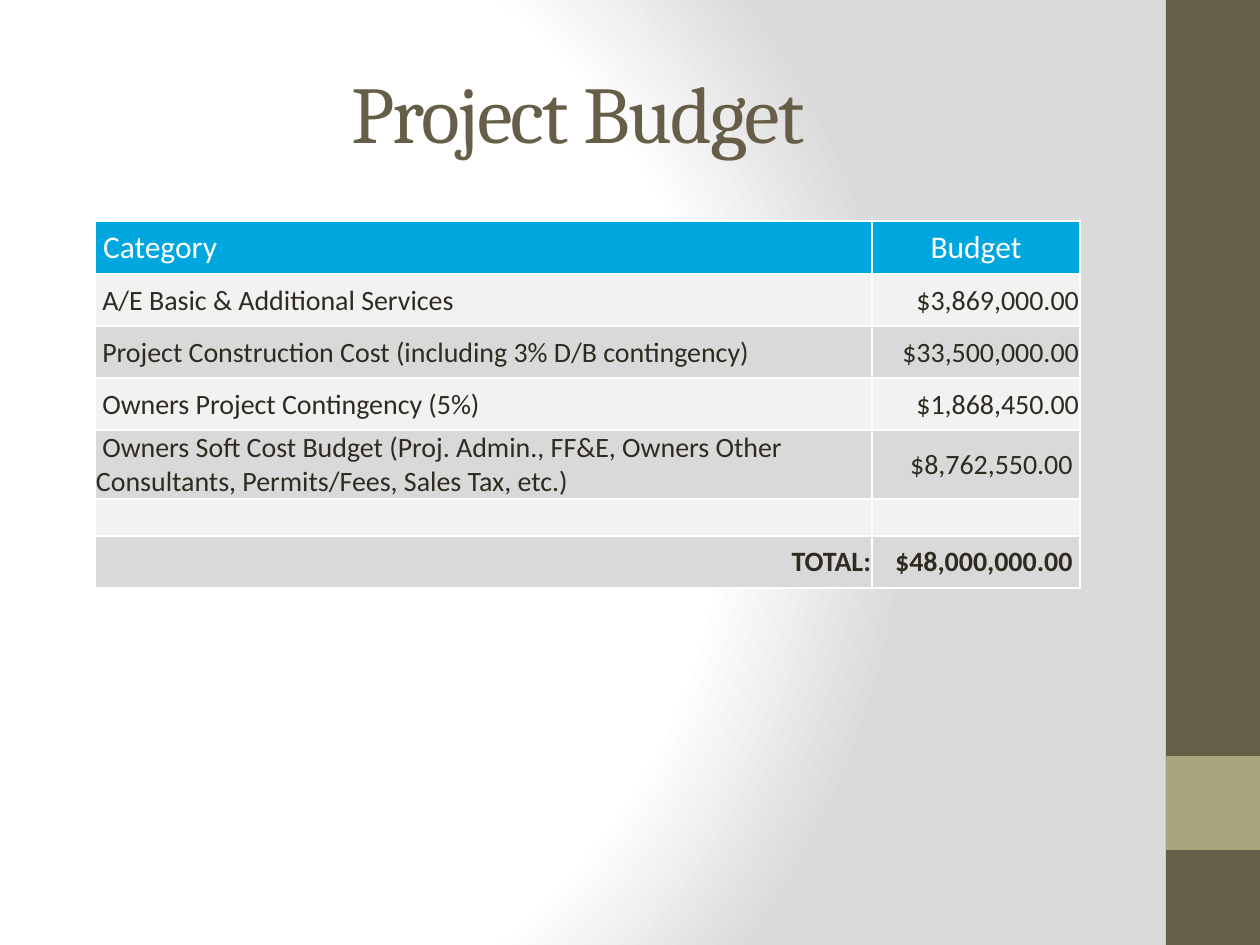
import lxml.etree
import pptx
import pptx.dml.color
import pptx.enum.shapes
import pptx.enum.text
import pptx.oxml
import pptx.oxml.ns
import pptx.util

RGBColor = pptx.dml.color.RGBColor
BROWN = RGBColor(0x67, 0x5E, 0x47)
OLIVE = RGBColor(0xA9, 0xA5, 0x7C)
BLUE = RGBColor(0x00, 0xA6, 0xDE)
WHITE = RGBColor(0xFF, 0xFF, 0xFF)
LIGHT_GRAY = RGBColor(0xF2, 0xF2, 0xF2)
MID_GRAY = RGBColor(0xD9, 0xD9, 0xD9)
PALE_GRAY = RGBColor(0xDA, 0xDA, 0xDA)
INK = RGBColor(0x2F, 0x2B, 0x20)

LEFT = pptx.enum.text.PP_ALIGN.LEFT
CENTER = pptx.enum.text.PP_ALIGN.CENTER
RIGHT = pptx.enum.text.PP_ALIGN.RIGHT
MIDDLE = pptx.enum.text.MSO_ANCHOR.MIDDLE
qn = pptx.oxml.ns.qn


def px(length):
    return pptx.util.Emu(round(length * 914400 / 126))


def add_text(paragraph, text, alignment, font_format):
    paragraph.alignment = alignment
    run = paragraph.add_run()
    run.text = text
    for name, value in font_format.items():
        if name == "color":
            run.font.color.rgb = value
        else:
            setattr(run.font, name, value)
    return run


presentation = pptx.Presentation()
presentation.slide_width = px(1260)
presentation.slide_height = px(945)
slide = presentation.slides.add_slide(presentation.slide_layouts[6])

# Background: circular gradient
slide.background.fill.gradient()
gradient = slide.element.find(".//" + qn("a:gradFill"))
for child in list(gradient):
    gradient.remove(child)
stops = lxml.etree.SubElement(gradient, qn("a:gsLst"))
for position, color in ((0, WHITE), (75, WHITE), (100, PALE_GRAY)):
    stop = lxml.etree.SubElement(stops, qn("a:gs"), pos=str(position * 1000))
    lxml.etree.SubElement(stop, qn("a:srgbClr"), val=str(color))
circle = lxml.etree.SubElement(gradient, qn("a:path"), {"path": "circle"})
lxml.etree.SubElement(circle, qn("a:fillToRect"), l="20000", t="50000", r="100000", b="50000")

# Side bar and its accent square
for top, height, color in ((0, 945, BROWN), (756, 94, OLIVE)):
    bar = slide.shapes.add_shape(
        pptx.enum.shapes.MSO_SHAPE.RECTANGLE, px(1166), px(top), px(94), px(height))
    bar.shadow.inherit = False
    bar.fill.solid()
    bar.fill.fore_color.rgb = color
    bar.line.fill.background()

# Title
title = slide.shapes.add_textbox(px(53), px(32), px(1050), px(158))
title.text_frame.word_wrap = True
title.text_frame.vertical_anchor = MIDDLE
title_run = add_text(
    title.text_frame.paragraphs[0], "Project Budget", CENTER,
    {"name": "Cambria", "size": pptx.util.Pt(46), "color": BROWN})
title_run.font._element.set("spc", "-100")

# Budget table: category, amount, alignment of each, row height
BUDGET_ROWS = [
    (" Category", "Budget", LEFT, CENTER, 53),
    (" A/E Basic & Additional Services", "$3,869,000.00", LEFT, RIGHT, 52),
    (" Project Construction Cost (including 3% D/B contingency)", "$33,500,000.00",
     LEFT, RIGHT, 52),
    (" Owners Project Contingency (5%)", "$1,868,450.00", LEFT, RIGHT, 52),
    (" Owners Soft Cost Budget (Proj. Admin., FF&E, Owners Other Consultants, "
     "Permits/Fees, Sales Tax, etc.)", "$8,762,550.00 ", LEFT, RIGHT, 69),
    ("", "", LEFT, RIGHT, 37),
    ("TOTAL:", "$48,000,000.00 ", RIGHT, RIGHT, 52),
]
COLUMN_WIDTHS = (777, 208)
CELL_FORMAT = {
    "margin_left": px(1), "margin_right": px(1), "margin_top": px(1),
    "margin_bottom": 0, "vertical_anchor": MIDDLE,
}
table = slide.shapes.add_table(
    len(BUDGET_ROWS), len(COLUMN_WIDTHS), px(95), px(221), px(sum(COLUMN_WIDTHS)),
    px(sum(row[-1] for row in BUDGET_ROWS))).table
for column, width in zip(table.columns, COLUMN_WIDTHS):
    column.width = px(width)

for row_index, (category, amount, *alignments, height) in enumerate(BUDGET_ROWS):
    table.rows[row_index].height = px(height)
    is_header = row_index == 0
    fill_color = BLUE if is_header else (MID_GRAY, LIGHT_GRAY)[row_index % 2]
    font_format = {
        "name": "Calibri",
        "size": pptx.util.Pt(18 if is_header else 16),
        "bold": row_index == len(BUDGET_ROWS) - 1,
        "color": WHITE if is_header else INK,
    }
    for column_index, text in enumerate((category, amount)):
        cell = table.cell(row_index, column_index)
        for name, value in CELL_FORMAT.items():
            setattr(cell, name, value)
        paragraph = cell.text_frame.paragraphs[0]
        if text:
            add_text(paragraph, text, alignments[column_index], font_format)
        else:
            lxml.etree.SubElement(paragraph._p, qn("a:endParaRPr"), sz="1100")
        cell.fill.solid()
        cell.fill.fore_color.rgb = fill_color
        # White one-point borders go before the fill
        properties = cell._tc.get_or_add_tcPr()
        for order, side in enumerate(("a:lnL", "a:lnR", "a:lnT", "a:lnB")):
            border = lxml.etree.Element(qn(side), w="12700")
            solid = lxml.etree.SubElement(border, qn("a:solidFill"))
            lxml.etree.SubElement(solid, qn("a:srgbClr"), val=str(WHITE))
            properties.insert(order, border)

presentation.save("out.pptx")
